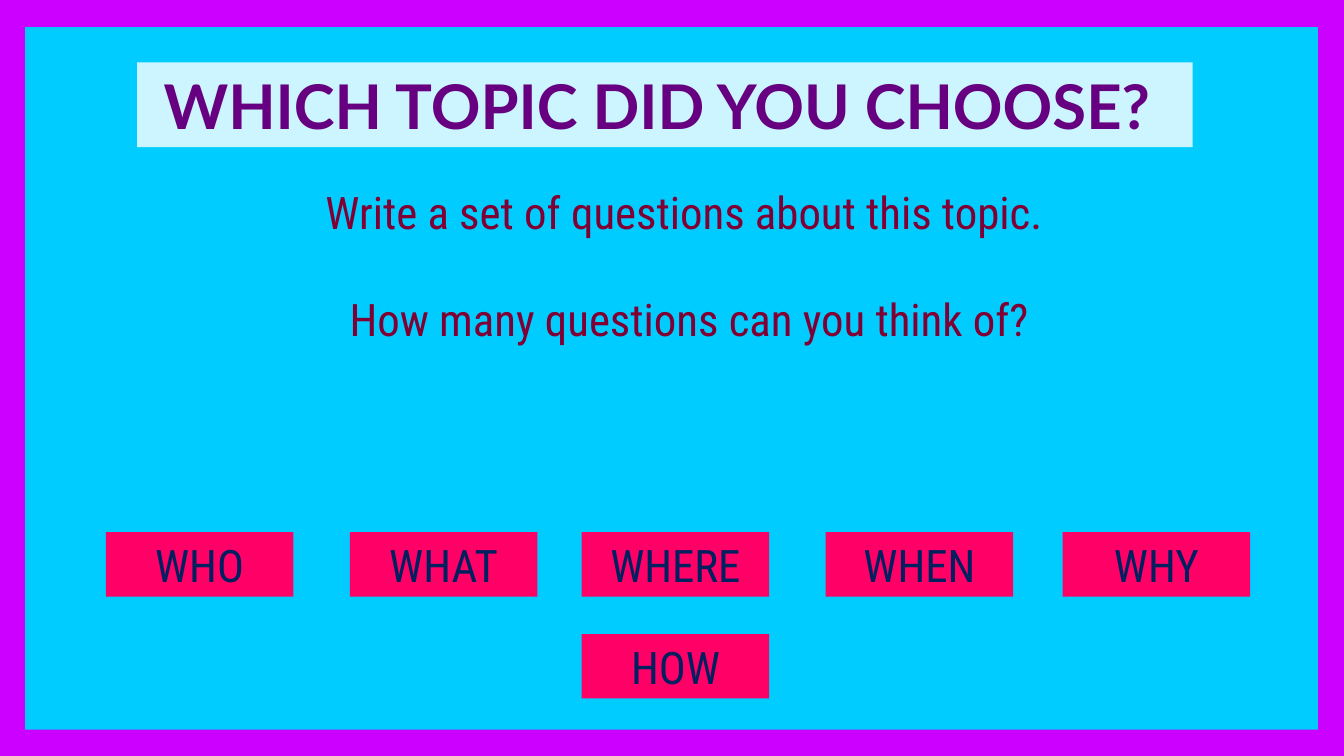
from pptx import Presentation
from pptx.dml.color import RGBColor
from pptx.enum.shapes import MSO_SHAPE
from pptx.enum.text import MSO_ANCHOR, PP_ALIGN
from pptx.util import Inches, Pt


def paint(fill, color):
    """Give a fill one solid colour."""
    fill.solid()
    fill.fore_color.rgb = RGBColor.from_string(color)


def add_text(tf, text, size=32, font="Roboto Condensed", color="002060",
             bold=False, gap=0, anchor=MSO_ANCHOR.MIDDLE):
    """Write centred lines into a text frame, with a gap between paragraphs."""
    tf.word_wrap = True
    tf.vertical_anchor = anchor
    for i, line in enumerate(text.split("\n")):
        p = tf.add_paragraph() if i else tf.paragraphs[0]
        p.alignment = PP_ALIGN.CENTER
        if i:
            p.space_before = Pt(gap)
        r = p.add_run()
        r.text = line
        r.font.size = Pt(size)
        r.font.name = font
        r.font.bold = bold
        r.font.color.rgb = RGBColor.from_string(color)


def add_box(s, left, top, width, height, color):
    """Add a plain filled rectangle."""
    sp = s.shapes.add_shape(MSO_SHAPE.RECTANGLE, Inches(left), Inches(top),
                            Inches(width), Inches(height))
    sp.shadow.inherit = False
    sp.line.fill.background()
    paint(sp.fill, color)
    return sp


def add_question_word(s, word, left, top):
    """Add one question word on its pink label."""
    sp = add_box(s, left, top, 1.86, 0.64, "FF0066")
    add_text(sp.text_frame, word)


def main():
    """Build the slide and save it."""
    prs = Presentation()
    prs.slide_width, prs.slide_height = Inches(13.33), Inches(7.5)
    s = prs.slides.add_slide(prs.slide_layouts[6])
    paint(s.background.fill, "CC00FF")
    add_box(s, 0.25, 0.27, 12.82, 6.97, "00CCFF")

    title = add_box(s, 1.36, 0.62, 10.47, 0.84, "CCF5FF")
    add_text(title.text_frame, "WHICH TOPIC DID YOU CHOOSE? ", size=44,
             font="Lato", color="660080", bold=True)

    task = s.shapes.add_textbox(Inches(1.05), Inches(1.78), Inches(11.58), Inches(1.72))
    add_text(task.text_frame, "Write a set of questions about this topic. \n"
             "How many questions can you think of?",
             color="800033", gap=38, anchor=MSO_ANCHOR.TOP)

    words = {"WHO": 1.05, "WHAT": 3.47, "WHERE": 5.77, "WHEN": 8.19, "WHY": 10.54}
    for word, left in words.items():
        add_question_word(s, word, left, 5.28)
    add_question_word(s, "HOW", words["WHERE"], 6.29)
    prs.save("out.pptx")


if __name__ == "__main__":
    main()
